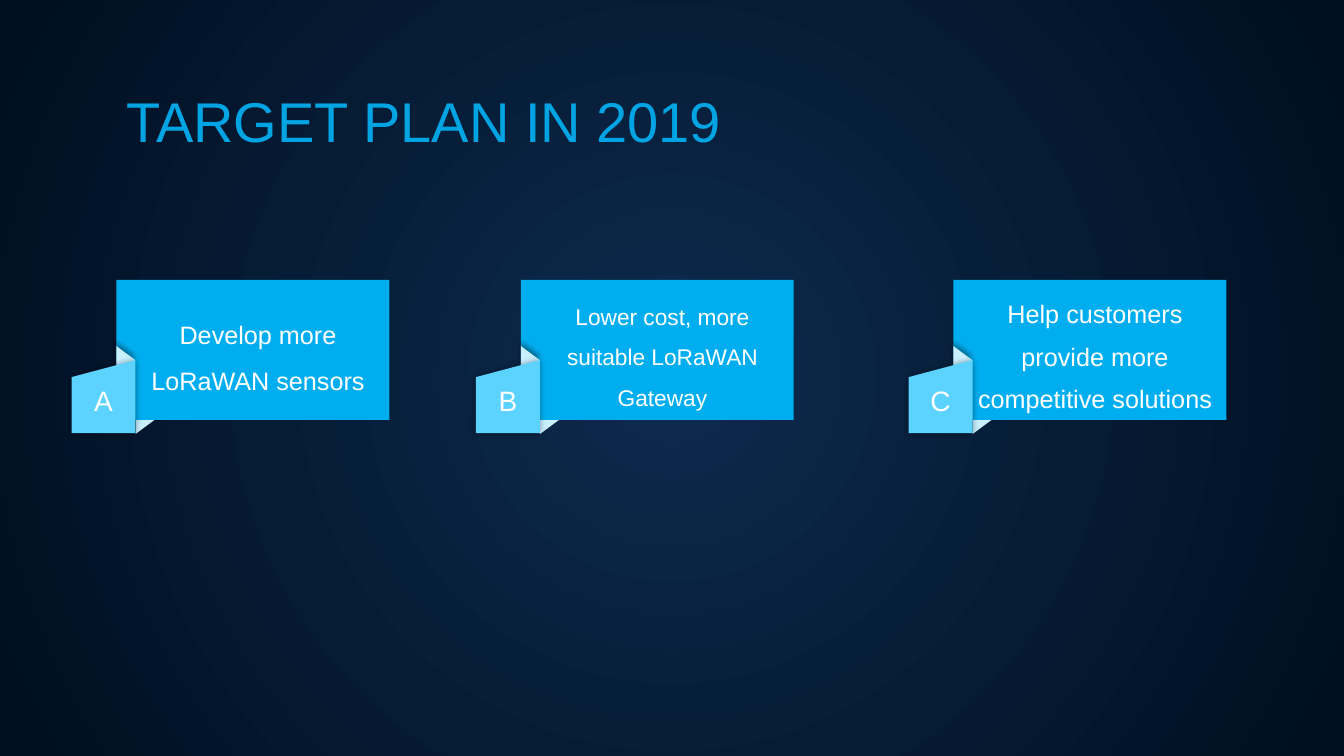
"""Builds the 2019 target plan slide with three folded-ribbon goal cards."""
from dataclasses import dataclass

from lxml import etree
from pptx import Presentation
from pptx.dml.color import RGBColor
from pptx.enum import shapes, text
from pptx.oxml import ns
from pptx.util import Pt

TITLE = "TARGET PLAN IN 2019"
GOALS = [
    {"letter": "A", "goal": "Develop more LoRaWAN sensors", "left": 51.1, "size": 18, "spacing": 1.5},
    {"letter": "B", "goal": "Lower cost, more suitable LoRaWAN Gateway", "left": 340, "size": 16.2, "spacing": 1.5},
    {"letter": "C", "goal": "Help customers provide more competitive solutions", "left": 649, "size": 18, "spacing": 1.4},
]


@dataclass(frozen=True)
class Theme:
    font: str = "Arial"
    title: str = "00A4E3"
    text: str = "FFFFFF"
    card: str = "00AEEF"
    flap: str = "C9F0FF"
    tab: str = "5CD3FF"
    shadow: str = "000000"
    glow: str = "0D2A4D"
    edge: str = "000F21"
    title_size: float = 40
    letter_size: float = 20


THEME = Theme()
CARD_TOP, CARD_W, CARD_H, CARD_SHIFT = 200, 195, 100, 32
TAB_TOP, TAB_W, TAB_H, TAB_SLOPE = 257.2, 45.7, 52.2, 12.2
FLAP_W, FLAP_H = 20, 13.5


def add_element(parent, tag, **attrs):
    return etree.SubElement(parent, ns.qn(tag), attrs)


def paint(sp, color):
    sp.fill.solid()
    sp.fill.fore_color.rgb = RGBColor.from_string(color)
    sp.line.fill.background()
    sp.shadow.inherit = False


def add_shadow(sp, blur, dist, angle):
    effects = sp._element.spPr.find(ns.qn("a:effectLst"))
    shadow = add_element(effects, "a:outerShdw", blurRad=str(Pt(blur)), dist=str(Pt(dist)),
                         dir=str(angle * 60000), algn="ctr", rotWithShape="0")
    color = add_element(shadow, "a:srgbClr", val=THEME.shadow)
    add_element(color, "a:alpha", val="40000")


def write(sp, words, size, color, align, spacing=1.0, insets=(7.2, 3.6, 7.2, 3.6)):
    tf = sp.text_frame
    tf.text = words
    tf.word_wrap = True
    tf.auto_size = text.MSO_AUTO_SIZE.NONE
    tf.vertical_anchor = text.MSO_ANCHOR.MIDDLE
    tf.margin_left, tf.margin_top, tf.margin_right, tf.margin_bottom = map(Pt, insets)
    p = tf.paragraphs[0]
    p.alignment, p.line_spacing = align, spacing
    font = p.runs[0].font
    font.name, font.size = THEME.font, Pt(size)
    font.color.rgb = RGBColor.from_string(color)


def add_flap(group, left, top):
    sp = group.shapes.add_shape(shapes.MSO_SHAPE.ISOSCELES_TRIANGLE,
                                Pt(left), Pt(top), Pt(FLAP_W), Pt(FLAP_H))
    sp.rotation = 90
    paint(sp, THEME.flap)
    add_shadow(sp, 4, 3, 270)


def add_goal(s, letter, goal, left, size, spacing):
    group = s.shapes.add_group_shape()
    card_left, tab_right = left + CARD_SHIFT, left + TAB_W
    turn = (FLAP_W - FLAP_H) / 2
    card_bottom = CARD_TOP + CARD_H
    center = text.PP_ALIGN.CENTER

    add_flap(group, tab_right - turn, card_bottom - FLAP_H / 2)
    card = group.shapes.add_shape(shapes.MSO_SHAPE.RECTANGLE, Pt(card_left), Pt(CARD_TOP),
                                  Pt(CARD_W), Pt(CARD_H))
    paint(card, THEME.card)
    write(card, goal, size, THEME.text, center, spacing, (14.4, 3.6, 7.2, 3.6))
    add_flap(group, card_left - turn, TAB_TOP - FLAP_H / 2)

    bottom = TAB_TOP + TAB_H
    outline = [(tab_right, bottom), (left, bottom), (left, TAB_TOP + TAB_SLOPE)]
    builder = group.shapes.build_freeform(Pt(tab_right), Pt(TAB_TOP))
    builder.add_line_segments([(Pt(x), Pt(y)) for x, y in outline], close=True)
    tab = builder.convert_to_shape()
    paint(tab, THEME.tab)
    add_shadow(tab, 5, 0, 0)
    write(tab, letter, THEME.letter_size, THEME.text, center, insets=(7.2, 8.6, 7.2, 3.6))


def set_background(s):
    fill = s.background.fill
    fill.gradient()
    for stop, color, position in zip(fill.gradient_stops, (THEME.glow, THEME.edge), (0, 0.97)):
        stop.color.rgb = RGBColor.from_string(color)
        stop.position = position
    linear = s._element.find(".//" + ns.qn("a:lin"))
    grad = linear.getparent()
    grad.remove(linear)
    circle = add_element(grad, "a:path", path="circle")
    add_element(circle, "a:fillToRect", l="50000", t="50000", r="50000", b="50000")


def main():
    prs = Presentation()
    prs.slide_width, prs.slide_height = Pt(960), Pt(540)
    s = prs.slides.add_slide(prs.slide_layouts[5])
    set_background(s)
    title = s.shapes.title
    title.left, title.top, title.width, title.height = map(Pt, (83, 34, 578, 80))
    write(title, TITLE, THEME.title_size, THEME.title, text.PP_ALIGN.LEFT, 1.5)
    for goal in GOALS:
        add_goal(s, **goal)
    prs.save("out.pptx")


if __name__ == "__main__":
    main()
